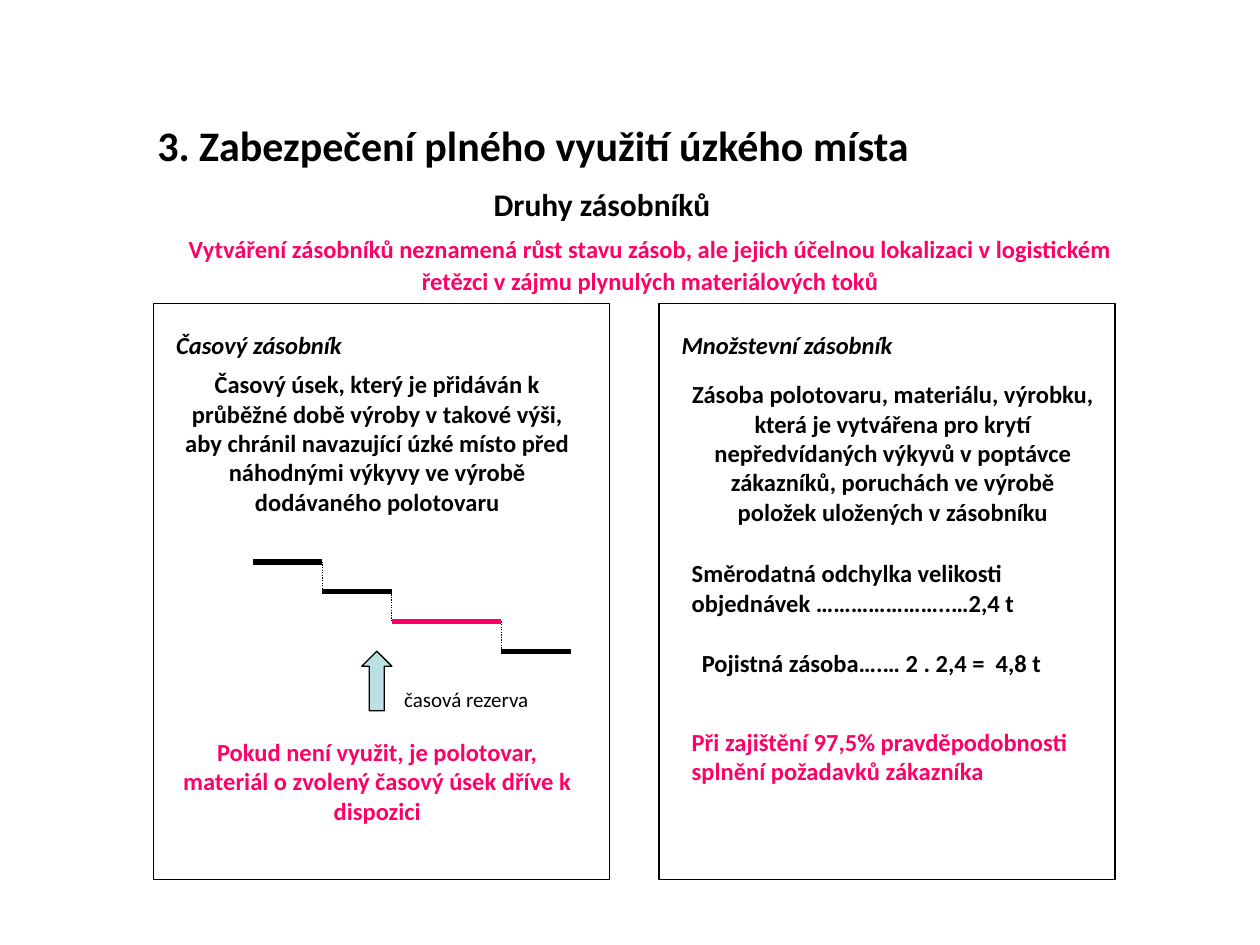
"""Build the slide on time and quantity buffers at a bottleneck."""
from itertools import pairwise

from lxml.etree import SubElement
from pptx import Presentation
from pptx.dml.color import RGBColor
from pptx.enum.dml import MSO_LINE_DASH_STYLE as Dash
from pptx.enum.shapes import MSO_CONNECTOR as Connector, MSO_SHAPE as Shape
from pptx.enum.text import PP_ALIGN as Align
from pptx.oxml.ns import qn
from pptx.util import Pt

BLACK, PINK, WHITE, PALE_BLUE = "000000", "FF0066", "FFFFFF", "BBE0E3"
FONT = {"name": "Calibri", "size": Pt(14), "bold": True, "italic": False}
LEFT, RIGHT = 87.8, 376.6
PANEL_TOP, PANEL_WIDTH, PANEL_HEIGHT = 173.5, 260.6, 329
INSET, TEXT_WIDTH = 5.8, 244
TIME_X, QUANTITY_X = LEFT + INSET, RIGHT + 2 * INSET

HEADINGS = [
    ("3. Zabezpečení plného využití úzkého místa", (82.8, 61.9, 563.8, 39.6),
     {"size": 24, "spacing": 1.1}),
    ("Druhy zásobníků", (275, 100.1, 153.4, 31),
     {"size": 18, "spacing": 1.1}),
    ("Vytváření zásobníků neznamená růst stavu zásob, ale jejich účelnou lokalizaci "
     "v logistickém řetězci v zájmu plynulých materiálových toků",
     (LEFT, 128.2, 567.4, 44.6), {"color": PINK, "align": Align.CENTER, "spacing": 1.1}),
]
PANELS = [(LEFT, "Časový zásobník"), (RIGHT, "Množstevní zásobník")]
BODY_TEXTS = [
    ("Časový úsek, který je přidáván k průběžné době výroby v takové výši, aby chránil "
     "navazující úzké místo před náhodnými výkyvy ve výrobě dodávaného polotovaru",
     (TIME_X, 207.4, TEXT_WIDTH, 92.2), {"align": Align.CENTER}),
    ("Pokud není využit, je polotovar, materiál o zvolený časový úsek dříve k dispozici",
     (TIME_X, 417.6, TEXT_WIDTH, 58.3), {"color": PINK, "align": Align.CENTER}),
    ("Zásoba polotovaru, materiálu, výrobku, která je vytvářena pro krytí "
     "nepředvídaných výkyvů v poptávce zákazníků, poruchách ve výrobě položek "
     "uložených v zásobníku",
     (QUANTITY_X, 213.1, TEXT_WIDTH, 92.2), {"align": Align.CENTER}),
    ("Směrodatná odchylka velikosti objednávek …………………..…2,4 t",
     (QUANTITY_X, 315.4, TEXT_WIDTH, 41), {}),
    ("Pojistná zásoba….… 2 . 2,4 =  4,8 t",
     (QUANTITY_X + INSET, 366.5, TEXT_WIDTH, 23.8), {}),
    ("Při zajištění 97,5% pravděpodobnosti splnění požadavků zákazníka",
     (QUANTITY_X, 411.8, TEXT_WIDTH, 41), {"color": PINK}),
    ("časová rezerva", (223.9, 388.8, 102.2, 21.6), {"size": 12, "bold": False}),
]
STAIR_START, STAIR_DROP = (144.7, 321.1), 17
STAIR_STEPS = [(39.6, BLACK), (39.6, BLACK), (62.6, PINK), (39.6, BLACK)]
ARROW_BOX = (206.7, 372.1, 17.2, 34)


def rgb(value):
    """Turn a hex string into a colour."""
    return RGBColor.from_string(value)


def points(values):
    """Turn plain numbers into lengths in points."""
    return [Pt(value) for value in values]


def apply_format(target, values):
    """Set each named value on the target."""
    for name, value in values.items():
        setattr(target, name, value)


def add_text(slide, text, box, color=BLACK, size=14, bold=True, italic=False,
             align=Align.LEFT, spacing=1.0):
    """Add a wrapped text box with one formatted paragraph."""
    frame = slide.shapes.add_textbox(*points(box)).text_frame
    frame.word_wrap = True
    paragraph = frame.paragraphs[0]
    apply_format(paragraph, {"alignment": align, "line_spacing": spacing})
    run = paragraph.add_run()
    run.text = text
    apply_format(run.font, FONT | {"size": Pt(size), "bold": bold, "italic": italic})
    run.font.color.rgb = rgb(color)


def add_shape(slide, kind, box, fill):
    """Add a filled preset shape with a thin black outline."""
    shape = slide.shapes.add_shape(kind, *points(box))
    shape.shadow.inherit = False
    shape.fill.solid()
    shape.fill.fore_color.rgb = rgb(fill)
    shape.line.color.rgb = rgb(BLACK)
    shape.line.width = Pt(0.75)
    return shape


def add_line(slide, start, end, color=BLACK, width=3, dash=None):
    """Add a straight line without a shadow."""
    line = slide.shapes.add_connector(Connector.STRAIGHT, *points(start + end))
    line.line.color.rgb = rgb(color)
    apply_format(line.line, {"width": Pt(width), "dash_style": dash})
    SubElement(line._element.spPr, qn("a:effectLst"))


def add_stairs(slide):
    """Draw the descending steps joined by dotted risers."""
    x, y = STAIR_START
    treads = []
    for index, (width, color) in enumerate(STAIR_STEPS):
        level = y + index * STAIR_DROP
        treads.append(((x, level), (x + width, level), color))
        x += width
    for start, end, color in treads:
        add_line(slide, start, end, color)
    for (_, upper, _), (lower, _, _) in pairwise(treads):
        add_line(slide, upper, lower, width=0.75, dash=Dash.ROUND_DOT)


def main():
    """Build and save the presentation."""
    presentation = Presentation()
    apply_format(presentation, {"slide_width": Pt(720), "slide_height": Pt(540)})
    slide = presentation.slides.add_slide(presentation.slide_layouts[6])
    for left, title in PANELS:
        add_shape(slide, Shape.RECTANGLE, (left, PANEL_TOP, PANEL_WIDTH, PANEL_HEIGHT), WHITE)
        add_text(slide, title, (left + INSET, 185, TEXT_WIDTH, 23.8), italic=True)
    for text, box, style in HEADINGS + BODY_TEXTS:
        add_text(slide, text, box, **style)
    add_stairs(slide)
    add_shape(slide, Shape.UP_ARROW, ARROW_BOX, PALE_BLUE)
    presentation.save("out.pptx")


if __name__ == "__main__":
    main()
